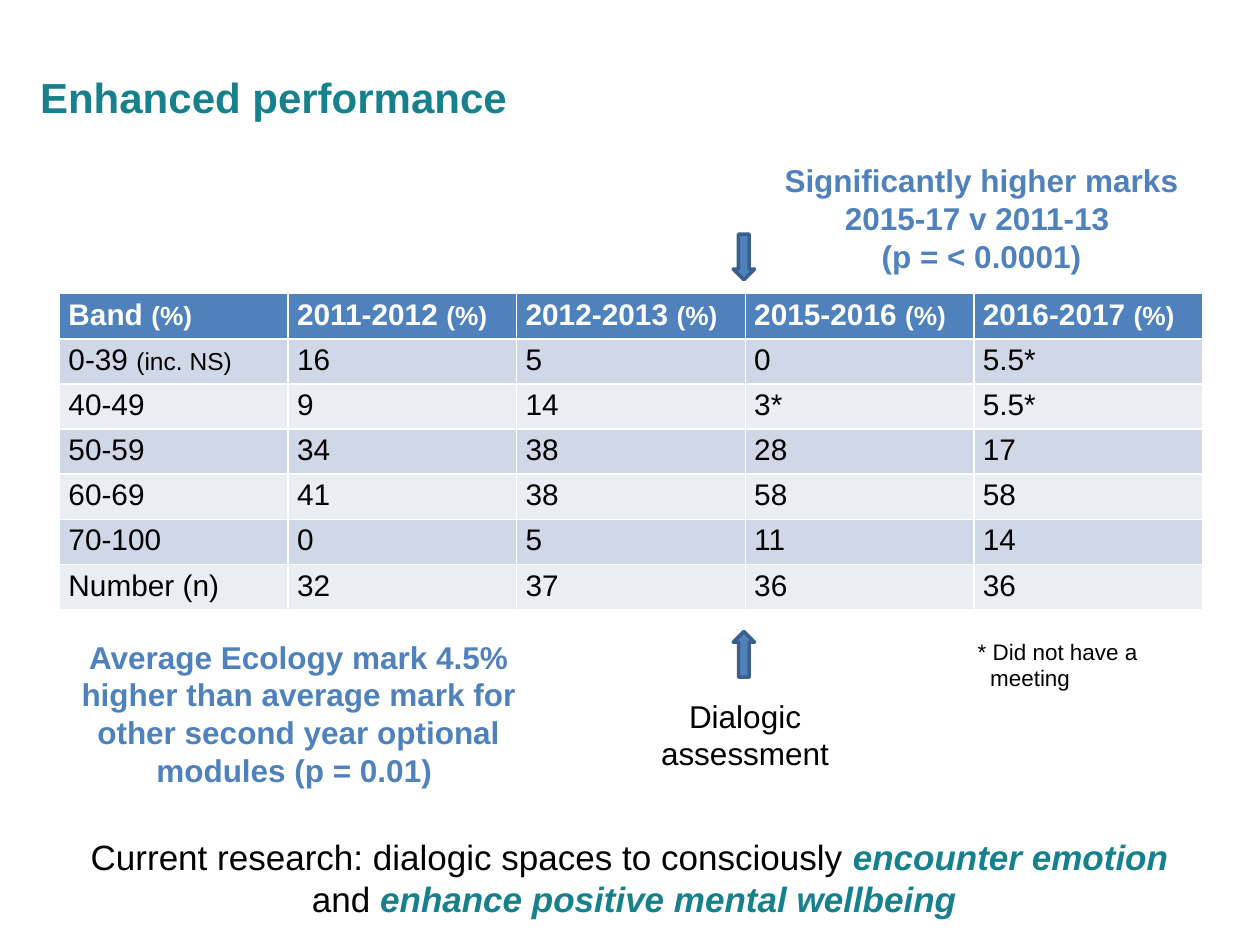
from pptx import Presentation
from pptx.dml.color import RGBColor
from pptx.enum.shapes import MSO_SHAPE
from pptx.enum.text import PP_ALIGN
from pptx.util import Cm, Pt

TEAL = RGBColor(0x16, 0x81, 0x8D)
BLUE = RGBColor(0x4F, 0x81, 0xBD)
DARK_BLUE = RGBColor(0x3A, 0x5F, 0x8C)
BAND_DARK = RGBColor(0xD0, 0xD8, 0xE8)
BAND_LIGHT = RGBColor(0xE9, 0xED, 0xF4)
BLACK = RGBColor(0, 0, 0)
WHITE = RGBColor(0xFF, 0xFF, 0xFF)


def add_run(paragraph, text, size, color, bold=False, italic=False):
    run = paragraph.add_run()
    run.text = text
    formats = {"name": "Arial", "size": Pt(size), "bold": bold, "italic": italic}
    for name, value in formats.items():
        setattr(run.font, name, value)
    run.font.color.rgb = color


def add_text(box, paragraphs, alignment=PP_ALIGN.CENTER):
    """Add a text box; each paragraph is a list of add_run argument tuples."""
    shape = slide.shapes.add_textbox(*(Cm(length) for length in box))
    text_frame = shape.text_frame
    text_frame.word_wrap = True
    for index, runs in enumerate(paragraphs):
        paragraph = text_frame.add_paragraph() if index else text_frame.paragraphs[0]
        paragraph.alignment = alignment
        for run in runs:
            add_run(paragraph, *run)
    return shape


presentation = Presentation()
presentation.slide_width = Cm(25.4)
presentation.slide_height = Cm(19.05)
slide = presentation.slides.add_slide(presentation.slide_layouts[6])

add_text((0.56, 1.32, 13.74, 1.27),
         [[("Enhanced performance", 24, TEAL, True)]], PP_ALIGN.LEFT)

# Marks table: a small suffix follows some of the labels
header = ["Band ", "2011-2012 ", "2012-2013 ", "2015-2016 ", "2016-2017 "]
rows = [
    header,
    ["0-39 ", "16", "5", "0", "5.5*"],
    ["40-49", "9", "14", "3*", "5.5*"],
    ["50-59", "34", "38", "28", "17"],
    ["60-69", "41", "38", "58", "58"],
    ["70-100", "0", "5", "11", "14"],
    ["Number (n)", "32", "37", "36", "36"],
]
suffixes = {label: ("(%)", 15) for label in header}
suffixes["0-39 "] = ("(inc. NS)", 14)

table = slide.shapes.add_table(len(rows), len(header), Cm(1.2), Cm(5.92),
                               Cm(23.04), Cm(6.37)).table
cell_format = {"margin_left": Cm(0.18), "margin_right": Cm(0.18),
               "margin_top": Cm(0.09), "margin_bottom": Cm(0.09)}
for row_index, row in enumerate(rows):
    is_header = row_index == 0
    band = BAND_DARK if row_index % 2 else BAND_LIGHT
    color = WHITE if is_header else BLACK
    for column_index, label in enumerate(row):
        cell = table.cell(row_index, column_index)
        for name, value in cell_format.items():
            setattr(cell, name, value)
        cell.fill.solid()
        cell.fill.fore_color.rgb = BLUE if is_header else band
        paragraph = cell.text_frame.paragraphs[0]
        add_run(paragraph, label, 17, color, is_header)
        if label in suffixes:
            add_run(paragraph, *suffixes[label], color, is_header)

# Arrows marking the start of dialogic assessment
for top, rotation in ((4.72, 0), (12.73, 180)):
    arrow = slide.shapes.add_shape(MSO_SHAPE.DOWN_ARROW, Cm(14.78), Cm(top),
                                   Cm(0.43), Cm(0.92))
    arrow.rotation = rotation
    arrow.shadow.inherit = False
    arrow.fill.solid()
    arrow.fill.fore_color.rgb = BLUE
    arrow.line.color.rgb = DARK_BLUE
    arrow.line.width = Pt(2)

add_text((12.85, 13.92, 4.34, 1.8), [[("Dialogic assessment", 18, BLACK)]])

footnote = add_text((19.46, 12.73, 5.28, 1.35),
                    [[("* Did not have a", 12.8, BLACK)], [("meeting", 12.8, BLACK)]],
                    PP_ALIGN.LEFT)
footnote.text_frame.paragraphs[1]._p.get_or_add_pPr().set("marL", str(Cm(0.25)))

add_text((15.06, 3.12, 9.45, 2.57),
         [[("Significantly higher marks 2015-17 v 2011-13 ", 18, BLUE, True)],
          [("(p = < 0.0001)", 18, BLUE, True)]])
add_text((0.89, 12.73, 10.26, 4.11),
         [[("Average Ecology mark 4.5% higher than average mark for other second "
            "year optional modules (p = 0.01) ", 18, BLUE, True)]])
add_text((0.89, 16.71, 23.8, 1.96),
         [[("Current research: dialogic spaces to consciously ", 20, BLACK),
           ("encounter emotion ", 20, TEAL, True, True)],
          [("and ", 20, BLACK),
           ("enhance positive mental wellbeing", 20, TEAL, True, True)]])

presentation.save("out.pptx")
